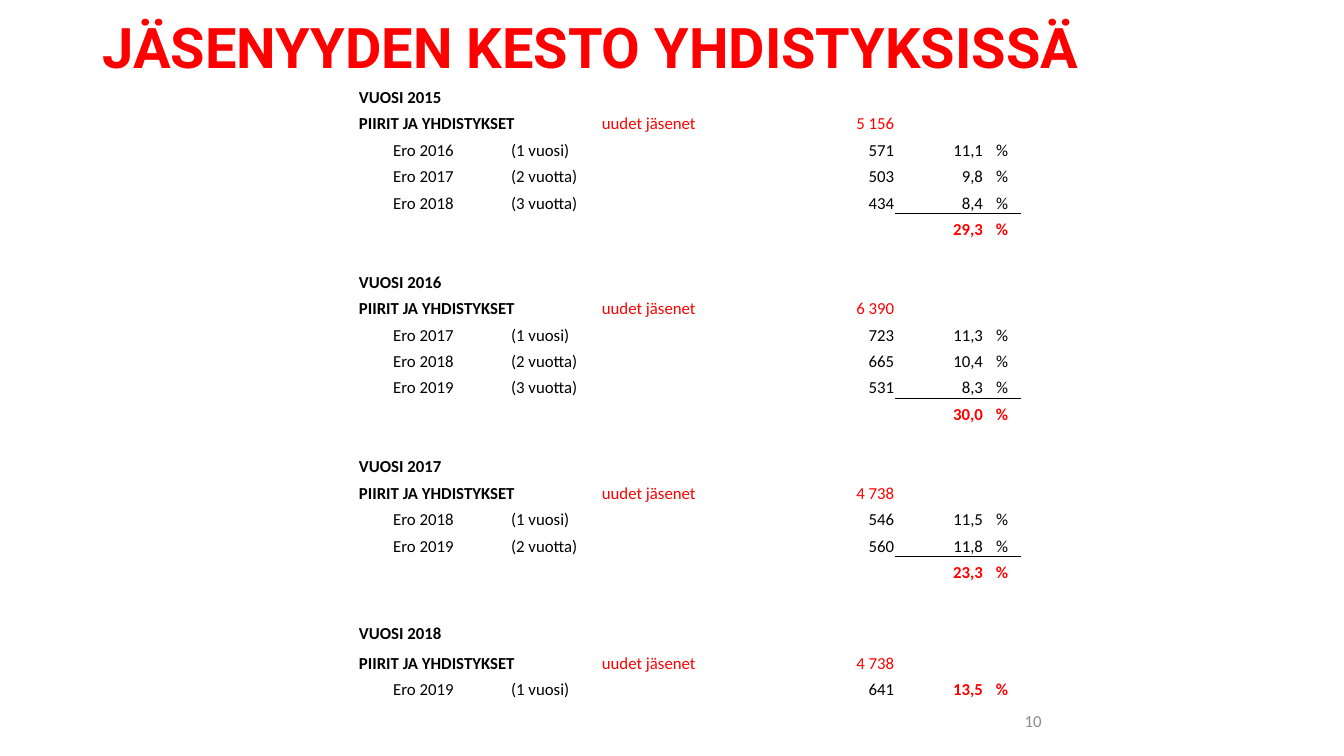
import pptx
import pptx.dml.color
import pptx.enum.text
import pptx.oxml.ns
import pptx.util
from lxml import etree

Inches = pptx.util.Inches
Pt = pptx.util.Pt
Align = pptx.enum.text.PP_ALIGN
Anchor = pptx.enum.text.MSO_ANCHOR
RED = pptx.dml.color.RGBColor(0xFF, 0x00, 0x00)
BLACK = pptx.dml.color.RGBColor(0x00, 0x00, 0x00)
GRAY = pptx.dml.color.RGBColor(0x8C, 0x8C, 0x8C)

COLUMN_WIDTHS = [0.34, 1.17, 0.9, 1.7, 1.22, 0.88, 0.36]
ROW_COUNT = 23
TABLE_HEIGHT = 6.14
TALL_ROWS = (19, 20, 21)
TALL_HEIGHT = 0.3
DURATIONS = ["(1 vuosi)", "(2 vuotta)", "(3 vuotta)"]
COHORTS = [
    (2015, "5 156", [("571", "11,1"), ("503", "9,8"), ("434", "8,4")], "29,3"),
    (2016, "6 390", [("723", "11,3"), ("665", "10,4"), ("531", "8,3")], "30,0"),
    (2017, "4 738", [("546", "11,5"), ("560", "11,8")], "23,3"),
    (2018, "4 738", [("641", "13,5")], None),
]


class MembershipSlide:
    body_font = "Calibri"
    body_size = 12

    def __init__(self, slide):
        self.slide = slide

    def style(self, paragraph, color, bold=False, align=Align.LEFT, size=body_size, font=body_font):
        paragraph.alignment = align
        paragraph.font.name = font
        paragraph.font.size = Pt(size)
        paragraph.font.bold = bold
        paragraph.font.color.rgb = color

    def text(self, words, left, top, width, height, color, **style):
        frame = self.slide.shapes.add_textbox(
            Inches(left), Inches(top), Inches(width), Inches(height)).text_frame
        frame.word_wrap = True
        frame.vertical_anchor = Anchor.MIDDLE
        paragraph = frame.paragraphs[0]
        paragraph.text = words
        self.style(paragraph, color, **style)
        return paragraph

    def table(self, left, top):
        table = self.slide.shapes.add_table(
            ROW_COUNT, len(COLUMN_WIDTHS), Inches(left), Inches(top),
            Inches(sum(COLUMN_WIDTHS)), Inches(TABLE_HEIGHT)).table
        table.first_row = False
        table.horz_banding = False
        for column, width in zip(table.columns, COLUMN_WIDTHS):
            column.width = Inches(width)
        tall_total = TALL_HEIGHT * len(TALL_ROWS)
        regular_height = (TABLE_HEIGHT - tall_total) / (ROW_COUNT - len(TALL_ROWS))
        for index, row in enumerate(table.rows):
            row.height = Inches(TALL_HEIGHT if index in TALL_ROWS else regular_height)
        for cell in table.iter_cells():
            cell.margin_left = cell.margin_right = cell.margin_top = Inches(0.01)
            cell.margin_bottom = 0
            cell.vertical_anchor = Anchor.BOTTOM
            cell.fill.background()
            paragraph = cell.text_frame.paragraphs[0]
            self.style(paragraph, BLACK)
            etree.SubElement(paragraph._p, pptx.oxml.ns.qn("a:endParaRPr"),
                             sz=str(self.body_size * 100))
        return table

    def cell(self, table, row, column, words, color=BLACK, bold=False, align=Align.LEFT, span=1):
        cell = table.cell(row, column)
        if span > 1:
            cell.merge(table.cell(row, column + span - 1))
        paragraph = cell.text_frame.paragraphs[0]
        paragraph.text = words
        self.style(paragraph, color, bold, align)

    def percent(self, table, row, share, color=BLACK, bold=False):
        self.cell(table, row, 5, share, color, bold, Align.RIGHT)
        self.cell(table, row, 6, "%", color, bold, Align.CENTER)

    def border(self, cell, side):
        qn = pptx.oxml.ns.qn
        line = etree.Element(qn(f"a:{side}"), w=str(Pt(0.5)))
        fill = etree.SubElement(line, qn("a:solidFill"))
        etree.SubElement(fill, qn("a:srgbClr"), val=str(BLACK))
        cell._tc.get_or_add_tcPr().insert(0, line)

    def cohort(self, table, row, year, joined, leavers, total):
        self.cell(table, row, 0, f"VUOSI {year}", bold=True, span=2)
        row += 1
        self.cell(table, row, 0, "PIIRIT JA YHDISTYKSET", bold=True, span=3)
        self.cell(table, row, 3, "uudet jäsenet", RED)
        self.cell(table, row, 4, joined, RED, align=Align.RIGHT)
        for years, (count, share) in enumerate(leavers, 1):
            row += 1
            self.cell(table, row, 1, f"Ero {year + years}")
            self.cell(table, row, 2, DURATIONS[years - 1], span=2)
            self.cell(table, row, 4, count, align=Align.RIGHT)
            if total:
                self.percent(table, row, share)
            else:
                self.percent(table, row, share, RED, True)
        if total:
            self.percent(table, row + 1, total, RED, True)
            for column in (5, 6):
                self.border(table.cell(row, column), "lnB")
                self.border(table.cell(row + 1, column), "lnT")
        return row + 3


def main():
    presentation = pptx.Presentation()
    presentation.slide_width = Inches(13.33)
    presentation.slide_height = Inches(7.5)
    page = MembershipSlide(presentation.slides.add_slide(presentation.slide_layouts[6]))
    title = page.text("JÄSENYYDEN KESTO YHDISTYKSISSÄ", 0.92, 0, 11.5, 0.99, RED,
                      bold=True, size=40, font="Roboto")
    title.line_spacing = 0.9
    table = page.table(3.55, 0.81)
    row = 0
    for cohort in COHORTS:
        row = page.cohort(table, row, *cohort)
    page.text("10", 8.96, 6.95, 1.47, 0.4, GRAY, align=Align.RIGHT)
    presentation.save("out.pptx")


if __name__ == "__main__":
    main()
